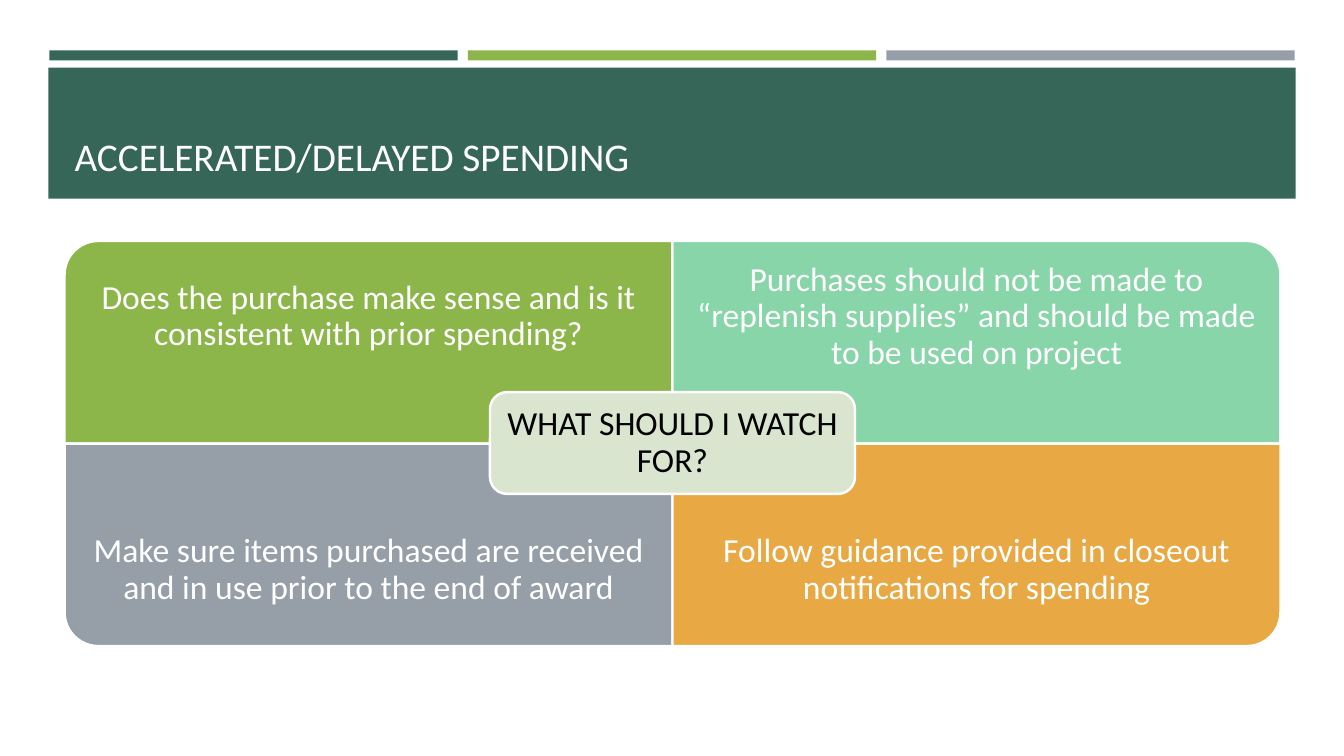
from pptx import Presentation
from pptx.dml.color import RGBColor
from pptx.enum.shapes import MSO_SHAPE
from pptx.enum.text import MSO_ANCHOR, MSO_AUTO_SIZE, PP_ALIGN
from pptx.util import Inches, Pt

RECT = MSO_SHAPE.RECTANGLE
ROUND = MSO_SHAPE.ROUNDED_RECTANGLE
CORNER = MSO_SHAPE.ROUND_1_RECTANGLE
MIDDLE, BOTTOM = MSO_ANCHOR.MIDDLE, MSO_ANCHOR.BOTTOM
LEFT, CENTER = PP_ALIGN.LEFT, PP_ALIGN.CENTER
FONT = "Calibri"
COLORS = {
    "dark": "366658", "green": "8CB64A", "gray": "969FA7", "mint": "88D5A9",
    "orange": "E8A844", "pale": "DAE5D0", "white": "FFFFFF", "black": "000000",
}

deck = Presentation()
deck.slide_width, deck.slide_height = Inches(13.33), Inches(7.5)
slide = deck.slides.add_slide(deck.slide_layouts[5])
shapes = slide.shapes


def add_block(kind, x, y, w, h, color, edge=False):
    block = shapes.add_shape(kind, Inches(x), Inches(y), Inches(w), Inches(h))
    block.shadow.inherit = False
    block.fill.solid()
    block.fill.fore_color.rgb = RGBColor.from_string(COLORS[color])
    if edge:
        block.line.color.rgb = RGBColor.from_string(COLORS["white"])
        block.line.width = Pt(1.75)
    else:
        block.line.fill.background()
    return block


def put_text(box, text, size, color, align, anchor, inset):
    frame = box.text_frame
    frame.word_wrap = True
    frame.auto_size = MSO_AUTO_SIZE.NONE
    frame.vertical_anchor = anchor
    frame.margin_left = frame.margin_right = Inches(inset)
    frame.margin_top = frame.margin_bottom = Inches(min(inset, 0.19))
    para = frame.paragraphs[0]
    para.alignment = align
    para.line_spacing = 0.9 if align == CENTER else 1.0
    run = para.add_run()
    run.text = text
    run.font.name, run.font.size = FONT, Pt(size)
    run.font.color.rgb = RGBColor.from_string(COLORS[color])


# Header: three strips above a band
for i, color in enumerate(["dark", "green", "gray"]):
    add_block(RECT, 0.49 + i * 4.15, 0.5, 4.05, 0.1, color)
band = add_block(RECT, 0.48, 0.67, 12.37, 1.3, "dark")

# Title, in front of the band
title = shapes.title
title.left, title.top = Inches(0.64), Inches(0.77)
title.width, title.height = Inches(12.06), Inches(1.11)
put_text(title, "ACCELERATED/DELAYED SPENDING", 28, "white", LEFT, BOTTOM, 0.1)
band.element.addnext(title.element)

# Four quarters, each turned so that its round corner faces out
X, Y, W, H = 0.64, 2.39, 6.03, 2.01
TEXT_H = H * 0.75
quarters = [
    (0, 0, 270, "green",
     "Does the purchase make sense and is it consistent with prior spending?"),
    (1, 0, 0, "mint",
     "Purchases should not be made to “replenish supplies” and should be made "
     "to be used on project"),
    (0, 1, 180, "gray",
     "Make sure items purchased are received and in use prior to the end of award"),
    (1, 1, 90, "orange",
     "Follow guidance provided in closeout notifications for spending"),
]
for col, row, turn, color, text in quarters:
    x, y = X + col * W, Y + row * H
    w, h = (H, W) if turn % 180 else (W, H)
    tile = add_block(CORNER, x + (W - w) / 2, y + (H - h) / 2, w, h, color, True)
    tile.rotation = turn
    box = shapes.add_textbox(Inches(x), Inches(y + row * (H - TEXT_H)),
                             Inches(W), Inches(TEXT_H))
    put_text(box, text, 24, "white", CENTER, MIDDLE, 0.19)

# Centre label
label = add_block(ROUND, 4.86, 3.89, 3.62, 1.01, "pale", True)
put_text(label, "WHAT SHOULD I WATCH FOR?", 24, "black", CENTER, MIDDLE, 0.1)

deck.save("out.pptx")
